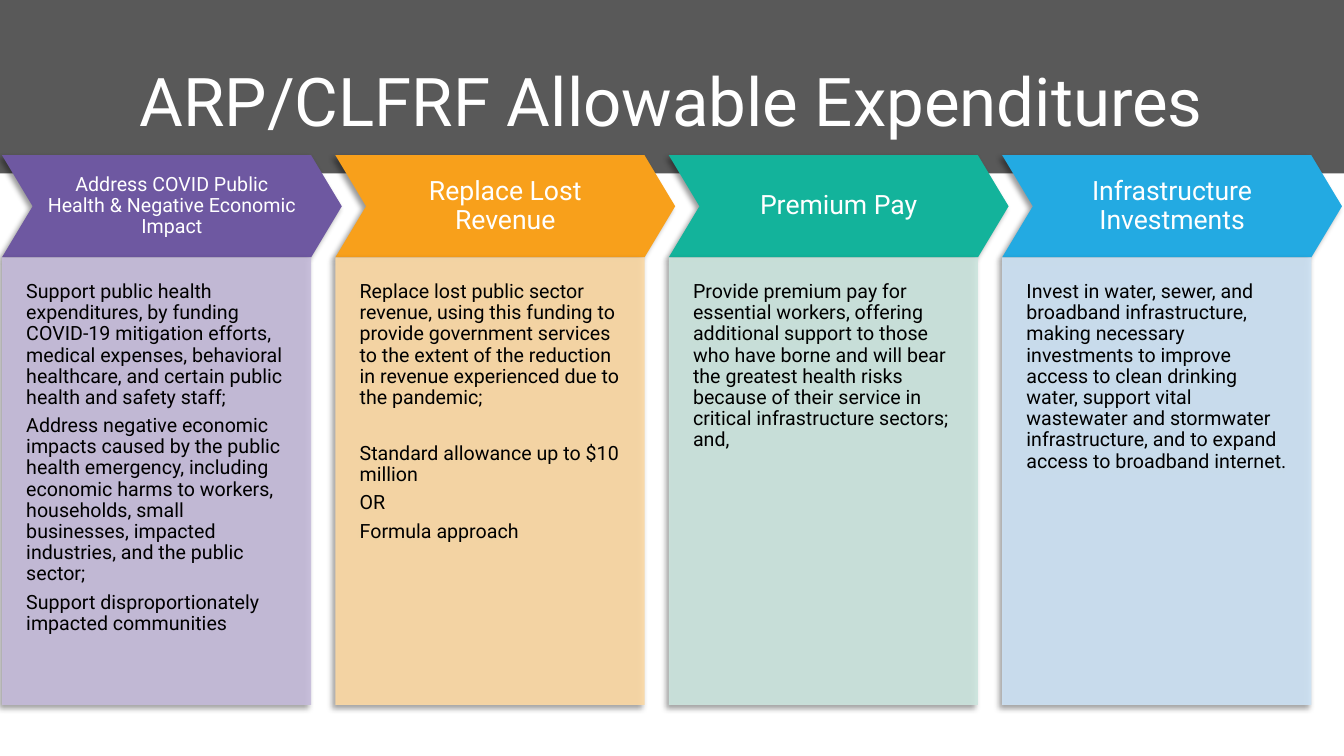
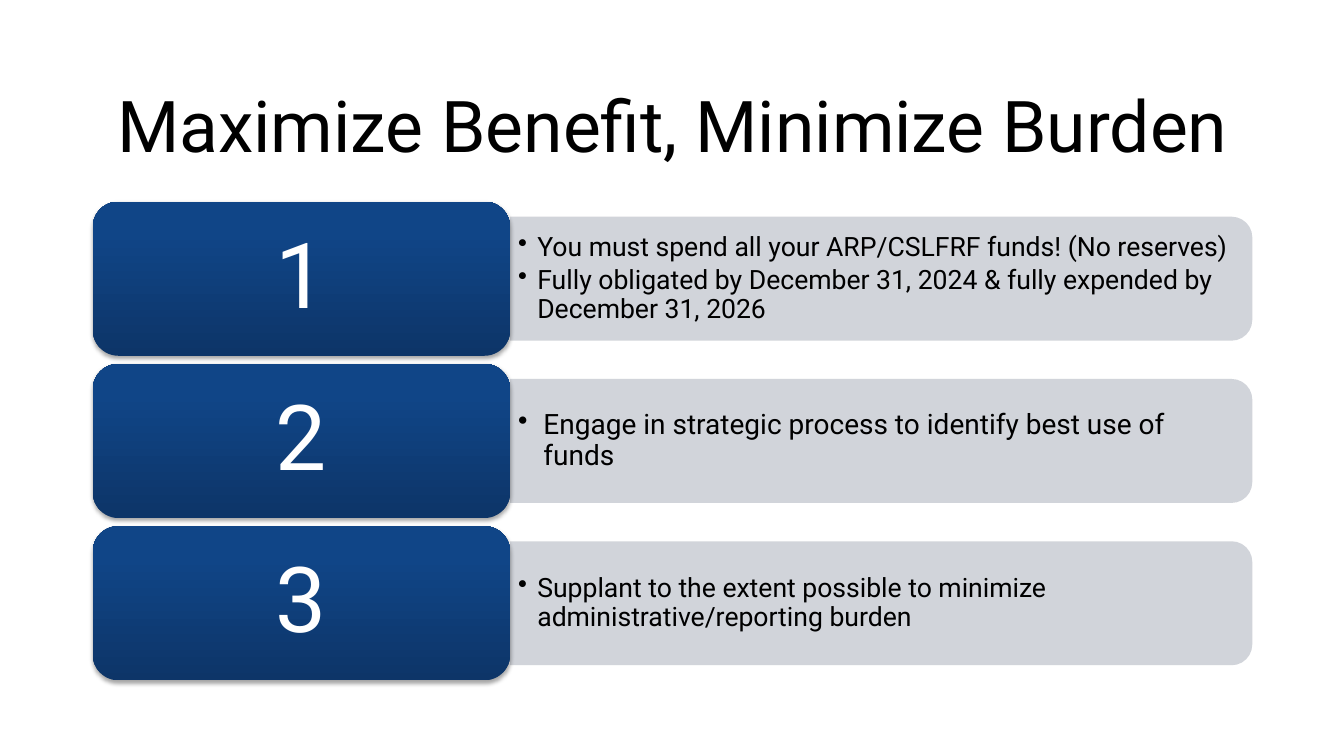
import copy

import pptx
import pptx.dml.color
import pptx.enum.shapes
import pptx.enum.text
import pptx.oxml
import pptx.oxml.ns
import pptx.util

COLORS = {
    "white": "FFFFFF", "black": "000000", "band": "595959", "pill": "CDD0D7",
    "purple": "6E58A1", "lilac": "C5BBDA", "orange": "F8A01B", "peach": "FCD9A4",
    "green": "13B39B", "mint": "CCE5DE", "blue": "23AAE2", "sky": "CDE2F4",
    "navy": "0D3568", "royal": "104587", "royal light": "0E458A",
}
FONT = "Roboto"
COLUMNS, ROWS = 40, 22.5
CARD_SHADOW = {"alpha": 40, "blur": 4, "distance": 3, "angle": 135}
BLOCK_SHADOW = {"alpha": 35, "blur": 3.1, "distance": 1.8, "angle": 90}
SHAPE = pptx.enum.shapes.MSO_SHAPE
ALIGN = pptx.enum.text.PP_ALIGN
ANCHOR = pptx.enum.text.MSO_ANCHOR

EXPENDITURES = [
    ("purple", "lilac", "Address COVID Public Health & Negative Economic Impact", 14, [
        "Support public health expenditures, by funding COVID-19 mitigation efforts, "
        "medical expenses, behavioral healthcare, and certain public health and safety staff;",
        "Address negative economic impacts caused by the public health emergency, including "
        "economic harms to workers, households, small businesses, impacted industries, "
        "and the public sector;",
        "Support disproportionately impacted communities"]),
    ("orange", "peach", "Replace Lost Revenue", 19, [
        "Replace lost public sector revenue, using this funding to provide government services "
        "to the extent of the reduction in revenue experienced due to the pandemic;",
        "Standard allowance up to $10 million", "OR", "Formula approach"]),
    ("green", "mint", "Premium Pay", 19, [
        "Provide premium pay for essential workers, offering additional support to those who "
        "have borne and will bear the greatest health risks because of their service in "
        "critical infrastructure sectors; and,"]),
    ("blue", "sky", "Infrastructure Investments", 19, [
        "Invest in water, sewer, and broadband infrastructure, making necessary investments to "
        "improve access to clean drinking water, support vital wastewater and stormwater "
        "infrastructure, and to expand access to broadband internet."]),
]
STEPS = [
    (19, 0.57, ["You must spend all your ARP/CSLFRF funds! (No reserves)",
                "Fully obligated by December 31, 2024 & fully expended by December 31, 2026"]),
    (20, 0.75, ["Engage in strategic process to identify best use of funds"]),
    (19, 0.57, ["Supplant to the extent possible to minimize administrative/reporting burden"]),
]


def rgb(name):
    """Return the named colour."""
    return pptx.dml.color.RGBColor.from_string(COLORS[name])


class Deck:
    """Hold the shared style and the slide being built."""

    def __init__(self):
        """Open an empty widescreen presentation."""
        self.presentation = pptx.Presentation()
        self.presentation.slide_width = pptx.util.Inches(13.33)
        self.presentation.slide_height = pptx.util.Inches(7.5)
        self.slide = None

    def cells(self, count):
        """Turn a number of grid cells into a length."""
        return pptx.util.Emu(round(self.presentation.slide_height * count / ROWS))

    def add_slide(self):
        """Start a blank slide."""
        self.slide = self.presentation.slides.add_slide(self.presentation.slide_layouts[6])

    def add_shape(self, kind, box, color=None, alpha=100, shadow=None):
        """Add a plain shape, optionally translucent and shadowed."""
        shape = self.slide.shapes.add_shape(kind, *map(self.cells, box))
        shape.shadow.inherit = False
        shape.line.fill.background()
        if color:
            shape.fill.solid()
            shape.fill.fore_color.rgb = rgb(color)
        if alpha < 100:
            fill_color = shape.element.spPr.find(".//" + pptx.oxml.ns.qn("a:srgbClr"))
            self.add_alpha(fill_color, alpha)
        if shadow:
            self.add_shadow(shape, **shadow)
        return shape

    def add_alpha(self, color, percent):
        """Make a colour element translucent."""
        alpha = pptx.oxml.parse_xml(
            f'<a:alpha {pptx.oxml.ns.nsdecls("a")} val="{percent * 1000}"/>')
        color.append(alpha)

    def add_shadow(self, shape, alpha, blur, distance, angle):
        """Give a shape a soft black outer shadow."""
        effects = shape.element.spPr.find(pptx.oxml.ns.qn("a:effectLst"))
        effects.append(pptx.oxml.parse_xml(
            f'<a:outerShdw {pptx.oxml.ns.nsdecls("a")} blurRad="{pptx.util.Pt(blur)}" '
            f'dist="{pptx.util.Pt(distance)}" dir="{angle * 60000}" rotWithShape="0">'
            f'<a:srgbClr val="{COLORS["black"]}"><a:alpha val="{alpha * 1000}"/></a:srgbClr>'
            '</a:outerShdw>'))

    def add_gradient(self, shape, stops):
        """Fill a shape from bottom to top through the given stops."""
        shape.fill.gradient()
        shape.fill.gradient_angle = 90
        stop_list = shape.element.spPr.find(".//" + pptx.oxml.ns.qn("a:gsLst"))
        while len(stop_list) < len(stops):
            stop_list.append(copy.deepcopy(stop_list[-1]))
        for stop, (position, color) in zip(shape.fill.gradient_stops, stops):
            stop.position = position
            stop.color.rgb = rgb(color)

    def add_textbox(self, box):
        """Add an empty text box."""
        return self.slide.shapes.add_textbox(*map(self.cells, box))

    def set_text(self, shape, texts, size, color="black", align=ALIGN.LEFT, anchor=ANCHOR.MIDDLE,
                 insets=(0, 0, 0, 0), spacing=0.9, after=0, bullet=0):
        """Put paragraphs into a shape, bulleted when an indent is given."""
        frame = shape.text_frame
        frame.word_wrap = True
        frame.vertical_anchor = anchor
        (frame.margin_left, frame.margin_top,
         frame.margin_right, frame.margin_bottom) = map(self.cells, insets)
        frame.text = "\n".join(texts)
        for paragraph in frame.paragraphs:
            paragraph.alignment = align
            paragraph.line_spacing = spacing
            paragraph.space_after = pptx.util.Pt(after)
            paragraph.font.name = FONT
            paragraph.font.size = pptx.util.Pt(size)
            paragraph.font.color.rgb = rgb(color)
            if bullet:
                self.add_bullet(paragraph, self.cells(bullet))

    def add_bullet(self, paragraph, indent):
        """Give a paragraph a hanging bullet."""
        properties = paragraph._p.get_or_add_pPr()
        properties.set("marL", str(indent))
        properties.set("indent", str(-indent))
        bullet = pptx.oxml.parse_xml(f'<a:buChar {pptx.oxml.ns.nsdecls("a")} char="•"/>')
        properties.find(pptx.oxml.ns.qn("a:defRPr")).addprevious(bullet)

    def add_title(self, text, box, size, color):
        """Add the centred slide title."""
        self.set_text(self.add_textbox(box), [text], size, color, ALIGN.CENTER,
                      insets=(0, 0.21, 0, 0.21), spacing=1.0)

    def add_card(self, left, head_color, body_color, heading, size, texts):
        """Add a chevron heading above a tinted panel."""
        chevron = self.add_shape(SHAPE.CHEVRON, (left, 4.62, 10.11, 3.04), head_color,
                                 shadow=CARD_SHADOW)
        chevron.adjustments[0] = 0.3
        self.set_text(chevron, [heading], size, "white", ALIGN.CENTER, insets=(0.39,) * 4)
        panel = self.add_shape(SHAPE.RECTANGLE, (left, 7.66, 9.2, 13.32), body_color, 90,
                               CARD_SHADOW)
        self.set_text(panel, texts, 14, anchor=ANCHOR.TOP, insets=(0.72, 0.72, 0.72, 1.47),
                      after=5)
        return panel

    def add_step(self, top, number, size, indent, texts):
        """Add a numbered block with a bulleted pill to its right."""
        left, width, height = 15.18, 22.08, 3.69
        shift = (width - height) / 2
        pill = self.add_shape(SHAPE.ROUND_2_SAME_RECTANGLE,
                              (left + shift, top + 0.45 - shift, height, width), "pill", 90)
        pill.rotation = 90
        self.set_text(self.add_textbox((left, top + 0.63, 21.9, 3.33)), texts, size,
                      insets=(0.24, 0.12, 0.24, 0.12), after=3, bullet=indent)
        block = self.add_shape(SHAPE.ROUNDED_RECTANGLE, (2.76, top, 12.42, 4.59),
                               shadow=BLOCK_SHADOW)
        self.add_gradient(block, [(0, "navy"), (0.8, "royal"), (1, "royal light")])
        self.set_text(block, [str(number)], 65, "white", ALIGN.CENTER,
                      insets=(0.81, 0.42, 0.81, 0.42))


def build_expenditures(deck):
    """Build the slide of four allowable uses."""
    deck.add_slide()
    deck.add_shape(SHAPE.RECTANGLE, (0, 0, COLUMNS, 5.16), "band")
    deck.add_title("ARP/CLFRF Allowable Expenditures", (2.1, 1.11, 35.76, 3.72), 48, "white")
    panels = [deck.add_card(0.06 + 9.92 * index, *card)
              for index, card in enumerate(EXPENDITURES)]
    panels[1].text_frame.paragraphs[1].space_before = pptx.util.Pt(20)


def build_steps(deck):
    """Build the slide of three numbered steps."""
    deck.add_slide()
    deck.add_title("Maximize Benefit, Minimize Burden", (2.76, 1.83, 34.5, 3.72), 51, "black")
    for index, step in enumerate(STEPS):
        deck.add_step(6 + 4.83 * index, index + 1, *step)


def main():
    """Build and save the presentation."""
    deck = Deck()
    build_expenditures(deck)
    build_steps(deck)
    deck.presentation.save("out.pptx")


if __name__ == "__main__":
    main()
